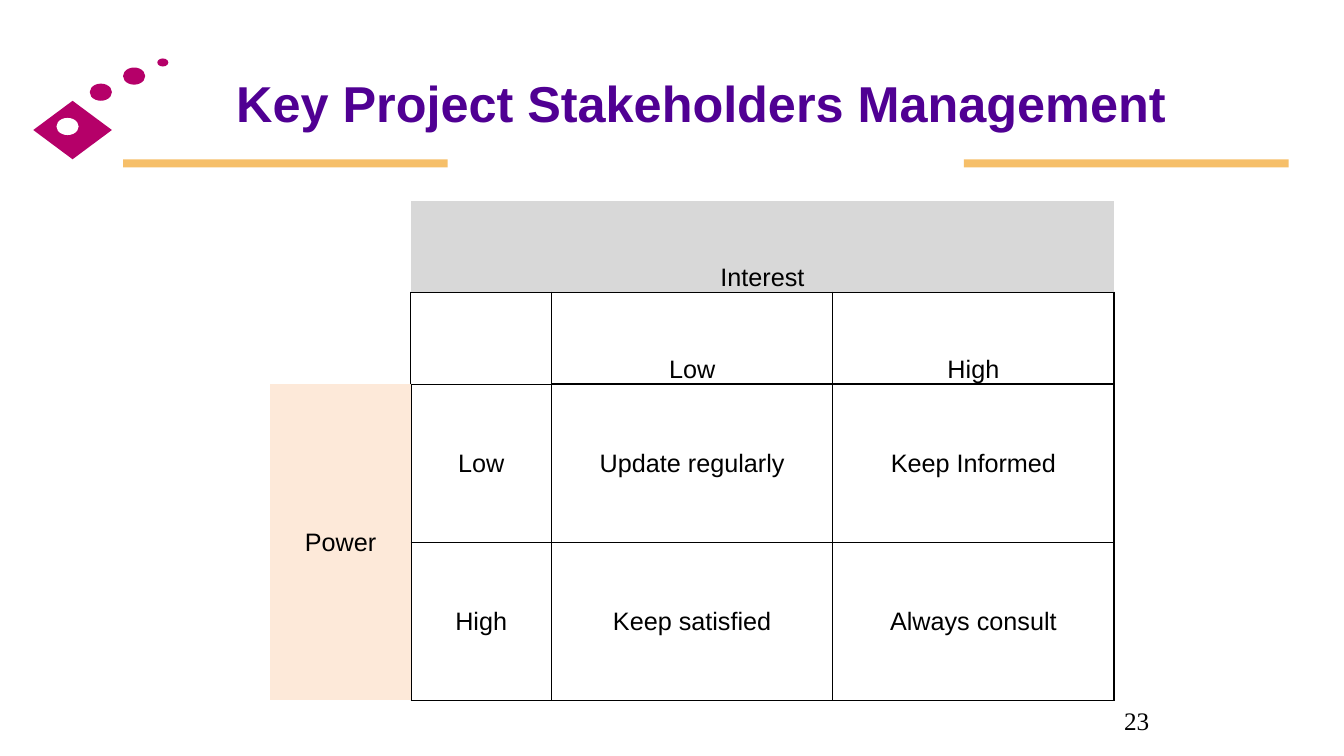
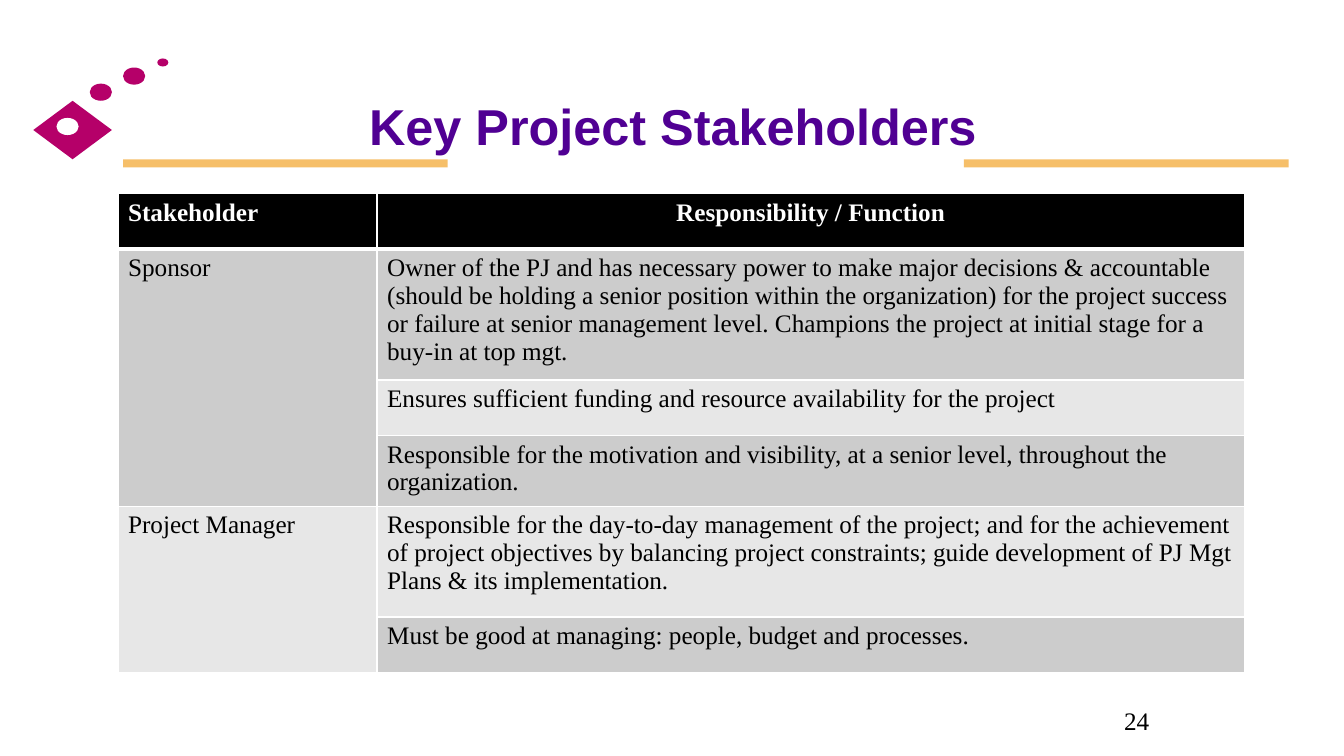
from lxml import etree
from pptx import Presentation
from pptx.dml.color import RGBColor
from pptx.enum.shapes import MSO_SHAPE as Shape
from pptx.enum.text import MSO_ANCHOR as Anchor, PP_ALIGN as Align
from pptx.oxml.ns import qn
from pptx.util import Inches, Pt

COLORS = {
    "title": "500093",
    "band": "F6BF69",
    "ornament": "B50069",
    "white": "FFFFFF",
    "black": "000000",
    "interest": "D8D8D8",
    "power": "FDE9D9",
    "dark_row": "CCCCCC",
    "light_row": "E7E7E7",
}
SANS, SERIF = "Arial", "Times New Roman"
NO_TABLE_STYLE = "{2D5ABB26-0587-4C30-8999-92F81FD0307C}"
PAGE_NUMBER_BOX = (11.05, 6.95, 0.61, 0.4)

ORNAMENTS = [
    (Shape.RECTANGLE, (1.22, 1.58, 3.22, 0.08), "band"),
    (Shape.RECTANGLE, (9.56, 1.58, 3.22, 0.08), "band"),
    (Shape.DIAMOND, (0.33, 1, 0.78, 0.58), "ornament"),
    (Shape.OVAL, (0.56, 1.17, 0.22, 0.17), "white"),
    (Shape.OVAL, (0.89, 0.83, 0.22, 0.17), "ornament"),
    (Shape.OVAL, (1.22, 0.67, 0.22, 0.17), "ornament"),
    (Shape.OVAL, (1.56, 0.58, 0.11, 0.08), "ornament"),
]

MATRIX = [
    ["", "Interest", "", ""],
    ["", "", "Low", "High"],
    ["Power", "Low", "Update regularly", "Keep Informed"],
    ["", "High", "Keep satisfied", "Always consult"],
]

DUTY_HEADINGS = ["Stakeholder", "Responsibility / Function"]
DUTIES = {
    "Sponsor": [
        "Owner of the PJ and has necessary power to make major decisions & "
        "accountable (should be holding a senior position within the "
        "organization) for the project success or failure at senior "
        "management level. Champions the project at initial stage for a "
        "buy-in at top mgt.",
        "Ensures sufficient funding and resource availability for the project",
        "Responsible for the motivation and visibility, at a senior level, "
        "throughout the organization.",
    ],
    "Project Manager": [
        "Responsible for the day-to-day management of the project; and for "
        "the achievement of project objectives by balancing project "
        "constraints; guide development of PJ Mgt Plans & its implementation.",
        "Must be good at managing: people, budget and processes.",
    ],
}


def color(name):
    return RGBColor.from_string(COLORS[name])


def write(frame, text, font, size=18, ink="black", bold=False, align=Align.LEFT):
    para = frame.paragraphs[0]
    para.alignment = align
    span = para.add_run()
    span.text = text
    span.font.name = font
    span.font.size = Pt(size)
    span.font.bold = bold
    span.font.color.rgb = color(ink)
    return para


def add_text(page, box, text, font, anchor=Anchor.TOP, **style):
    frame = page.shapes.add_textbox(*map(Inches, box)).text_frame
    frame.word_wrap = True
    frame.vertical_anchor = anchor
    return write(frame, text, font, **style)


def add_page(deck, title, title_box, number):
    """Add a slide with the shared ornaments, title and page number."""
    page = deck.slides.add_slide(deck.slide_layouts[6])
    for kind, box, fill in ORNAMENTS:
        shape = page.shapes.add_shape(kind, *map(Inches, box))
        shape.shadow.inherit = False
        shape.fill.solid()
        shape.fill.fore_color.rgb = color(fill)
        shape.line.fill.background()
    para = add_text(page, title_box, title, SANS, Anchor.MIDDLE, size=36,
                    ink="title", bold=True, align=Align.CENTER)
    para.line_spacing = 1.04
    add_text(page, PAGE_NUMBER_BOX, str(number), SERIF)
    return page


def add_plain_table(page, box, widths, heights):
    """Add a table without style, its columns and rows shared out by weight."""
    table = page.shapes.add_table(len(heights), len(widths),
                                  *map(Inches, box)).table
    table.first_row = table.horz_banding = False
    table._tbl.tblPr.find(qn("a:tableStyleId")).text = NO_TABLE_STYLE
    for column, width in zip(table.columns, widths):
        column.width = Inches(box[2] * width / sum(widths))
    for row, height in zip(table.rows, heights):
        row.height = Inches(box[3] * height / sum(heights))
    return table


def set_borders(cell, ink, **widths):
    """Draw the named sides (L, R, T, B), each with its width in points."""
    properties = cell._tc.get_or_add_tcPr()
    for side in "LRTB":
        if side in widths:
            line = etree.SubElement(properties, qn(f"a:ln{side}"),
                                    w=str(Pt(widths[side])))
            fill = etree.SubElement(line, qn("a:solidFill"))
            etree.SubElement(fill, qn("a:srgbClr"), val=COLORS[ink])


def fill_cell(cell, name):
    cell.fill.solid()
    cell.fill.fore_color.rgb = color(name)


def matrix_borders(row, column):
    if row == 0:
        return {"B": 1} if column else {}
    if column == 0:
        return {"R": 1 if row == 1 else 0.5}
    if column == 1:
        return dict(L=1, R=1, T=1, B=0.5) if row == 1 else dict.fromkeys("LRTB", 0.5)
    return dict.fromkeys("LRTB", 1)


def add_matrix(page, box):
    table = add_plain_table(page, box, [1, 1, 2, 2], [0.91, 0.91, 1.57, 1.57])
    table.cell(0, 1).merge(table.cell(0, 3))
    table.cell(2, 0).merge(table.cell(3, 0))
    for row, texts in enumerate(MATRIX):
        for column, text in enumerate(texts):
            cell = table.cell(row, column)
            set_borders(cell, "black", **matrix_borders(row, column))
            if text:
                cell.margin_left = cell.margin_right = cell.margin_top = Inches(0.01)
                cell.margin_bottom = 0
                cell.vertical_anchor = Anchor.BOTTOM if row < 2 else Anchor.MIDDLE
                write(cell.text_frame, text, SANS, align=Align.CENTER)
    fill_cell(table.cell(0, 1), "interest")
    fill_cell(table.cell(2, 0), "power")


def add_duty_table(page, box):
    table = add_plain_table(page, box, [2.57, 8.6], [1, 2, 1, 1, 2, 1])
    for column, heading in enumerate(DUTY_HEADINGS):
        cell = table.cell(0, column)
        set_borders(cell, "white", L=1, R=1, T=1, B=3)
        fill_cell(cell, "black")
        write(cell.text_frame, heading, SERIF, ink="white", bold=True,
              align=Align.CENTER if column else Align.LEFT)
    row = 1
    for stakeholder, duties in DUTIES.items():
        first = table.cell(row, 0)
        first.merge(table.cell(row + len(duties) - 1, 0))
        write(first.text_frame, stakeholder, SERIF)
        for duty in duties:
            write(table.cell(row, 1).text_frame, duty, SERIF)
            for column in range(2):
                cell = table.cell(row, column)
                set_borders(cell, "white", L=1, R=1, T=3 if row == 1 else 1, B=1)
                fill_cell(cell, "dark_row" if row % 2 else "light_row")
            row += 1


def main():
    deck = Presentation()
    deck.slide_width, deck.slide_height = Inches(13.33), Inches(7.5)
    page = add_page(deck, "Key Project Stakeholders Management",
                    (1.83, 0.5, 10.25, 1), 23)
    add_matrix(page, (2.68, 1.99, 8.37, 4.96))
    page = add_page(deck, "Key Project Stakeholders", (2.3, 0.92, 8.75, 0.62), 24)
    add_duty_table(page, (1.17, 1.92, 11.17, 4.4))
    deck.save("out.pptx")


if __name__ == "__main__":
    main()
